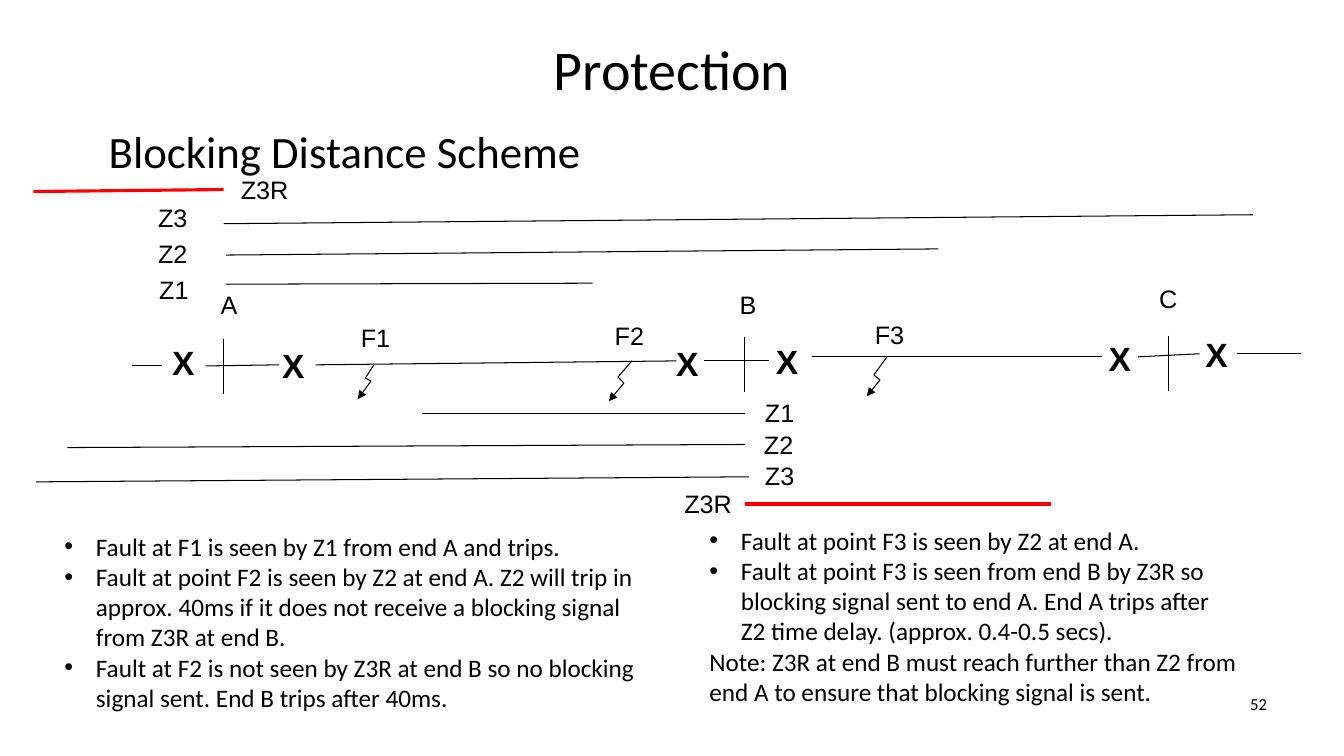
from dataclasses import dataclass
from itertools import pairwise

from lxml.etree import SubElement
from pptx import Presentation
from pptx.dml.color import RGBColor
from pptx.enum.shapes import MSO_CONNECTOR as Connector
from pptx.enum.text import MSO_ANCHOR as Anchor, PP_ALIGN as Align
from pptx.oxml.ns import qn
from pptx.util import Pt


@dataclass(frozen=True)
class Theme:
    ink: RGBColor = RGBColor(0, 0, 0)
    reverse: RGBColor = RGBColor(255, 0, 0)
    body_font: str = "Calibri"
    label_font: str = "Arial"
    title: int = 40
    subtitle: int = 32
    breaker: int = 24
    text: int = 18
    number: int = 12
    thin: float = 0.75
    thick: float = 2.25
    indent: float = 22.5


THEME = Theme()
SLIDE_SIZE = (960, 540)
LABEL_SIZE = (60, 29)
BUSBAR_HEIGHT = 39.4

TITLE = "Protection"
SUBTITLE = "Blocking Distance Scheme"
PAGE_NUMBER = "52"

BREAKERS = [(115.9, 240.5), (194.4, 242.6), (475.9, 241.2),
            (547.2, 239.8), (784.8, 237.6), (853.9, 234.7)]

CONDUCTORS = [
    (94.3, 261.4, 115.9, 261.4),
    (146.9, 261.4, 199.4, 260.6),
    (225.4, 260.6, 483.1, 257.8),
    (502.6, 257.8, 549.4, 257.8),
    (580.3, 254.9, 787, 254.9),
    (812.9, 254.9, 856.8, 252.7),
    (883.4, 252.7, 929.5, 252.7),
]

BUSBARS = [
    ("A", (150.5, 203), (159.8, 241.9)),
    ("B", (521.3, 203), (532.1, 240.5)),
    ("C", (820.8, 198.7), (834.5, 239.8)),
]

ZONES = [
    ("Z1", (106.6, 192.2), (161.3, 203, 423.4, 202.3)),
    ("Z2", (105.8, 167), (161.3, 182.2, 670.3, 177.8)),
    ("Z3", (105.8, 141.1), (159.8, 159.8, 895, 153.4)),
    ("Z3R", (164.9, 121), (159.8, 135.4, 23.8, 136.8)),
    ("Z1", (539.3, 280.1), (532.1, 295.2, 301.7, 295.2)),
    ("Z2", (538.6, 303.1), (532.1, 317.5, 48.2, 319.7)),
    ("Z3", (539.3, 325.4), (535, 340.6, 25.9, 344.2)),
    ("Z3R", (481.7, 344.9), (532.1, 360, 751, 360)),
]

FAULTS = [
    ("F1", (250.6, 226.8),
     [(267.1, 260.6), (261, 270), (265, 272.2), (255.6, 285.1)]),
    ("F2", (432, 225.4),
     [(451.4, 257.8), (441.4, 269.3), (445.7, 273.6), (434.9, 286.6)]),
    ("F3", (617.8, 224.6),
     [(633.6, 254.9), (624.2, 267.8), (628.6, 271.4), (619.2, 283)]),
]

NOTES = [
    ((38.9, 375.8, 432.7, 138.2), [
        ("•", "Fault at F1 is seen by Z1 from end A and trips."),
        ("•", "Fault at point F2 is seen by Z2 at end A. Z2 will trip in approx. "
              "40ms if it does not receive a blocking signal from Z3R at end B."),
        ("•", "Fault at F2 is not seen by Z3R at end B so no blocking signal "
              "sent. End B trips after 40ms."),
    ]),
    ((499.7, 371.5, 391, 138.2), [
        ("•", "Fault at point F3 is seen by Z2 at end A."),
        ("•", "Fault at point F3 is seen from end B by Z3R so blocking signal "
              "sent to end A. End A trips after Z2 time delay. "
              "(approx. 0.4-0.5 secs)."),
        ("", "Note: Z3R at end B must reach further than Z2 from end A to "
             "ensure that blocking signal is sent."),
    ]),
]


def add_bullet(para, mark):
    properties = para._p.get_or_add_pPr()
    properties.set("marL", str(Pt(THEME.indent)))
    properties.set("indent", str(-Pt(THEME.indent)))
    SubElement(properties, qn("a:buFont")).set("typeface", "Arial")
    SubElement(properties, qn("a:buChar")).set("char", mark)


def add_text(page, area, lines, size, font=THEME.body_font, bold=False,
             align=Align.LEFT, anchor=Anchor.TOP):
    box = page.shapes.add_textbox(*map(Pt, area))
    frame = box.text_frame
    frame.word_wrap = True
    frame.vertical_anchor = anchor
    for index, (mark, text) in enumerate(lines):
        para = frame.add_paragraph() if index else frame.paragraphs[0]
        if mark:
            add_bullet(para, mark)
        para.text = text
        para.alignment = align
        para.font.name = font
        para.font.size = Pt(size)
        para.font.bold = bold
        para.font.color.rgb = THEME.ink


def add_label(page, text, corner, size=THEME.text, bold=False):
    add_text(page, (*corner, *LABEL_SIZE), [("", text)], size,
             THEME.label_font, bold)


def add_line(page, ends, color=THEME.ink, width=THEME.thin, arrow=False):
    line = page.shapes.add_connector(Connector.STRAIGHT, *map(Pt, ends))
    line.line.color.rgb = color
    line.line.width = Pt(width)
    if arrow:
        SubElement(line.line._get_or_add_ln(), qn("a:tailEnd")).set("type", "triangle")
    SubElement(line._element.spPr, qn("a:effectLst"))


def draw_network(page):
    for ends in CONDUCTORS:
        add_line(page, ends)
    for corner in BREAKERS:
        add_label(page, "X", corner, THEME.breaker, bold=True)
    for name, corner, (x, top) in BUSBARS:
        add_label(page, name, corner)
        add_line(page, (x, top, x, top + BUSBAR_HEIGHT))


def draw_zones(page):
    for name, corner, ends in ZONES:
        add_label(page, name, corner)
        if name == "Z3R":
            add_line(page, ends, THEME.reverse, THEME.thick)
        else:
            add_line(page, ends)


def draw_faults(page):
    for name, corner, points in FAULTS:
        add_label(page, name, corner)
        for start, end in pairwise(points):
            add_line(page, (*start, *end), arrow=end == points[-1])


def main():
    deck = Presentation()
    deck.slide_width, deck.slide_height = map(Pt, SLIDE_SIZE)
    page = deck.slides.add_slide(deck.slide_layouts[6])
    add_text(page, (48, 8.6, 864, 80.6), [("", TITLE)], THEME.title,
             align=Align.CENTER, anchor=Anchor.MIDDLE)
    add_text(page, (70.6, 85, 818.6, 46), [("", SUBTITLE)], THEME.subtitle)
    draw_network(page)
    draw_zones(page)
    draw_faults(page)
    for area, lines in NOTES:
        add_text(page, area, lines, THEME.text)
    add_text(page, (688.3, 491.8, 223.9, 37.4), [("", PAGE_NUMBER)],
             THEME.number, align=Align.RIGHT)
    deck.save("out.pptx")


if __name__ == "__main__":
    main()
